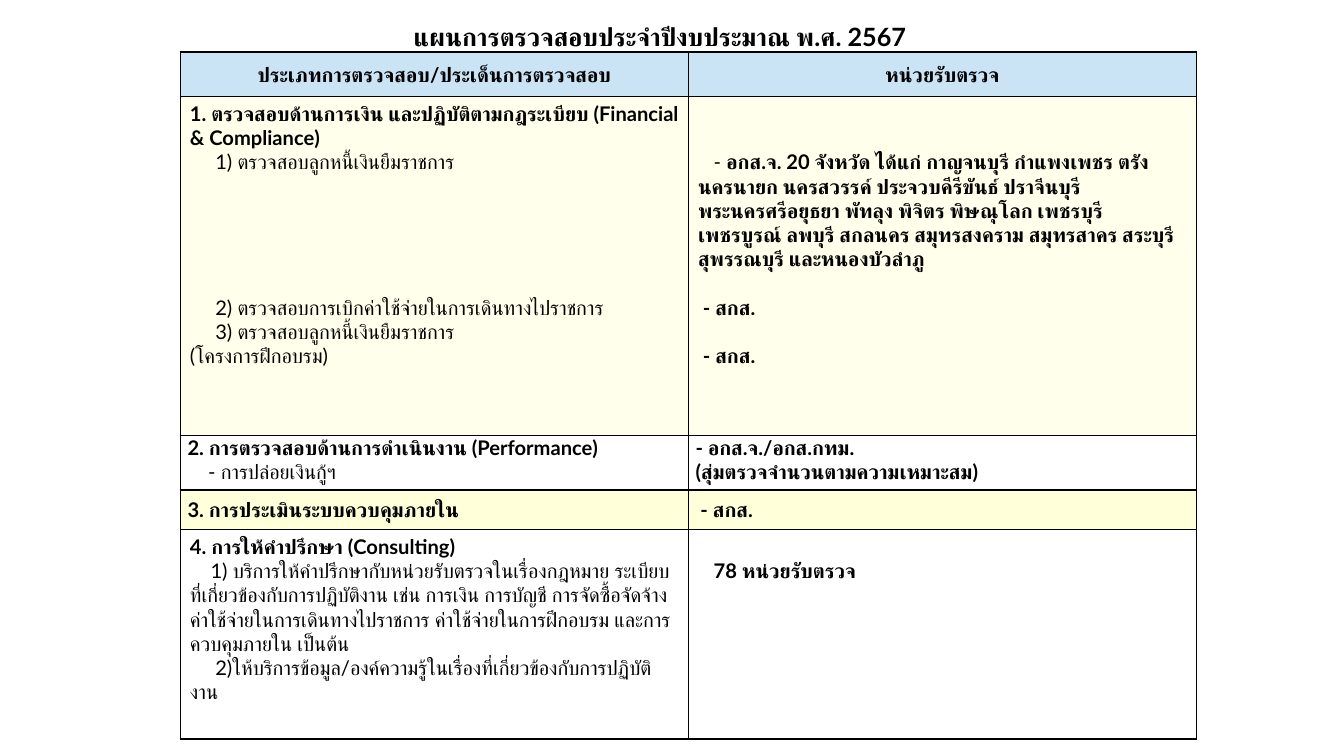
from dataclasses import dataclass

from lxml.etree import SubElement
from pptx import Presentation
from pptx.dml.color import RGBColor
from pptx.enum.text import MSO_ANCHOR, MSO_AUTO_SIZE, PP_ALIGN
from pptx.oxml import parse_xml
from pptx.oxml.ns import nsdecls, qn
from pptx.util import Inches, Pt

FONT = "Lato"
BLACK, WHITE = "000000", "FFFFFF"
HEADER_BLUE, PALE_YELLOW, YELLOW = "CAE4F6", "FFFFEB", "FFFFD9"
BODY_SIZE = 12
LINE = 14.4  # height of one body line, in points
COLUMN_WIDTH = 4.2


@dataclass
class Line:
    text: str
    bold: bool = True
    indent: float = 0  # first line, inches
    lines_before: int = 0
    lead: str = ""  # regular text ahead of the bold text


@dataclass
class Row:
    height: float
    fill: str
    audit: list[Line]
    units: list[Line]
    units_drop: int = 0  # lines left free above the right-hand text
    margins: tuple[float, float] = (0.08, 0.04)
    anchor: MSO_ANCHOR = MSO_ANCHOR.TOP
    align: PP_ALIGN = PP_ALIGN.LEFT


ROWS = [
    Row(0.37, HEADER_BLUE,
        [Line("ประเภทการตรวจสอบ/ประเด็นการตรวจสอบ")],
        [Line("หน่วยรับตรวจ")],
        anchor=MSO_ANCHOR.MIDDLE, align=PP_ALIGN.CENTER),
    Row(2.8, PALE_YELLOW,
        [Line("1. ตรวจสอบด้านการเงิน และปฏิบัติตามกฎระเบียบ (Financial & Compliance)"),
         Line("1) ตรวจสอบลูกหนี้เงินยืมราชการ", False, 0.21),
         Line("2) ตรวจสอบการเบิกค่าใช้จ่ายในการเดินทางไปราชการ", False, 0.21, 5),
         Line("3) ตรวจสอบลูกหนี้เงินยืมราชการ", False, 0.21),
         Line("(โครงการฝึกอบรม)", False)],
        [Line("อกส.จ. 20 จังหวัด ได้แก่ กาญจนบุรี กำแพงเพชร ตรัง นครนายก นครสวรรค์ "
              "ประจวบคีรีขันธ์ ปราจีนบุรี พระนครศรีอยุธยา พัทลุง พิจิตร พิษณุโลก เพชรบุรี "
              "เพชรบูรณ์ ลพบุรี สกลนคร สมุทรสงคราม สมุทรสาคร สระบุรี สุพรรณบุรี "
              "และหนองบัวลำภู", indent=0.13, lead="- "),
         Line("- สกส.", indent=0.04, lines_before=1),
         Line("- สกส.", indent=0.04, lines_before=1)],
        units_drop=2),
    Row(0.45, WHITE,
        [Line("2. การตรวจสอบด้านการดำเนินงาน (Performance)"),
         Line("- การปล่อยเงินกู้ฯ", False, 0.17)],
        [Line("- อกส.จ./อกส.กทม."),
         Line("(สุ่มตรวจจำนวนตามความเหมาะสม)")],
        margins=(0.06, 0)),
    Row(0.33, YELLOW,
        [Line("3. การประเมินระบบควบคุมภายใน")],
        [Line("- สกส.", indent=0.04)],
        margins=(0.06, 0), anchor=MSO_ANCHOR.MIDDLE),
    Row(1.73, WHITE,
        [Line("4. การให้คำปรึกษา (Consulting)"),
         Line("1) บริการให้คำปรึกษากับหน่วยรับตรวจในเรื่องกฎหมาย ระเบียบ "
              "ที่เกี่ยวข้องกับการปฏิบัติงาน เช่น การเงิน การบัญชี การจัดซื้อจัดจ้าง "
              "ค่าใช้จ่ายในการเดินทางไปราชการ ค่าใช้จ่ายในการฝึกอบรม "
              "และการควบคุมภายใน เป็นต้น", False, 0.17),
         Line("2)ให้บริการข้อมูล/องค์ความรู้ในเรื่องที่เกี่ยวข้องกับการปฏิบัติงาน", False, 0.21)],
        [Line("78 หน่วยรับตรวจ", indent=0.13)],
        units_drop=1),
]


def color(hex_code: str) -> RGBColor:
    return RGBColor.from_string(hex_code)


def style_run(run, size: float, bold: bool) -> None:
    run.font.name = FONT
    run.font.size = Pt(size)
    run.font.bold = bold
    run.font.color.rgb = color(BLACK)
    SubElement(run.font._element, qn("a:cs")).set("typeface", FONT)


def set_margins(target, side: float, vertical: float) -> None:
    target.margin_left = target.margin_right = Inches(side)
    target.margin_top = target.margin_bottom = Inches(vertical)


def add_borders(cell) -> None:
    properties = cell._tc.get_or_add_tcPr()
    for position, side in enumerate(("lnL", "lnR", "lnT", "lnB")):
        properties.insert(position, parse_xml(
            f'<a:{side} {nsdecls("a")} w="{Pt(1)}"><a:solidFill>'
            f'<a:srgbClr val="{BLACK}"/></a:solidFill></a:{side}>'))


def write_line(paragraph, line: Line, align: PP_ALIGN) -> None:
    paragraph.text = line.lead or line.text
    if line.lead:
        paragraph.add_run().text = line.text
    paragraph.alignment = align
    if line.lines_before:
        paragraph.space_before = Pt(line.lines_before * LINE)
    if line.indent:
        properties = paragraph._p.get_or_add_pPr()
        properties.set("marL", "0")
        properties.set("indent", str(Inches(line.indent)))
    for run in paragraph.runs:
        style_run(run, BODY_SIZE, line.bold and run.text != line.lead)


def fill_cell(cell, row: Row, lines: list[Line], drop: int) -> None:
    cell.fill.solid()
    cell.fill.fore_color.rgb = color(row.fill)
    add_borders(cell)
    set_margins(cell, *row.margins)
    if drop:
        cell.margin_top = Inches(row.margins[1] + drop * LINE / 72)
    cell.vertical_anchor = row.anchor
    for index, line in enumerate(lines):
        frame = cell.text_frame
        paragraph = frame.add_paragraph() if index else frame.paragraphs[0]
        write_line(paragraph, line, row.align)


def add_title(slide) -> None:
    title = slide.shapes.title
    title.left, title.top = Inches(3.16), Inches(0.13)
    title.width, title.height = Inches(4.59), Inches(0.34)
    frame = title.text_frame
    frame.text = "แผนการตรวจสอบประจำปีงบประมาณ พ.ศ. 2567"
    frame.word_wrap = False
    frame.auto_size = MSO_AUTO_SIZE.SHAPE_TO_FIT_TEXT
    frame.vertical_anchor = MSO_ANCHOR.MIDDLE
    set_margins(frame, 0.08, 0.04)
    frame.paragraphs[0].alignment = PP_ALIGN.CENTER
    style_run(frame.paragraphs[0].runs[0], 15, True)


def add_audit_plan(slide) -> None:
    height = sum(row.height for row in ROWS)
    plan = slide.shapes.add_table(
        len(ROWS), 2, Inches(1.49), Inches(0.43),
        Inches(2 * COLUMN_WIDTH), Inches(height)).table
    plan.first_row = plan.horz_banding = False
    for column in plan.columns:
        column.width = Inches(COLUMN_WIDTH)
    for index, row in enumerate(ROWS):
        plan.rows[index].height = Inches(row.height)
        fill_cell(plan.cell(index, 0), row, row.audit, 0)
        fill_cell(plan.cell(index, 1), row, row.units, row.units_drop)


def main() -> None:
    presentation = Presentation()
    presentation.slide_width = Inches(11.11)
    presentation.slide_height = Inches(6.25)
    slide = presentation.slides.add_slide(presentation.slide_layouts[5])
    add_title(slide)
    add_audit_plan(slide)
    presentation.save("out.pptx")


if __name__ == "__main__":
    main()
